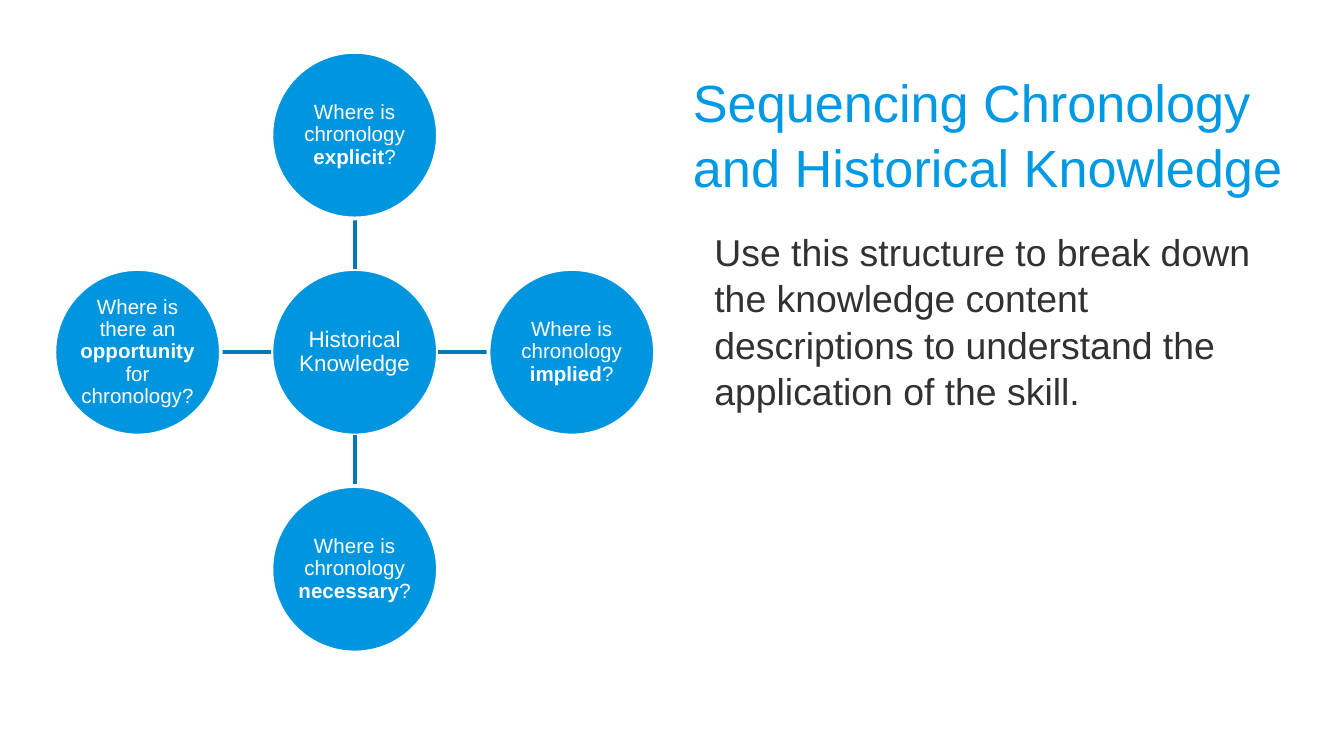
from dataclasses import dataclass

from lxml.etree import SubElement
from pptx import Presentation
from pptx.dml.color import RGBColor
from pptx.enum.shapes import MSO_CONNECTOR, MSO_SHAPE
from pptx.enum.text import MSO_ANCHOR, PP_ALIGN
from pptx.oxml.ns import qn
from pptx.slide import Slide
from pptx.text.text import TextFrame
from pptx.util import Pt


@dataclass(frozen=True)
class Theme:
    font: str = "Arial"
    title_color: RGBColor = RGBColor(0x00, 0x99, 0xE3)
    body_color: RGBColor = RGBColor(0x30, 0x31, 0x32)
    circle_color: RGBColor = RGBColor(0x00, 0x96, 0xDF)
    spoke_color: RGBColor = RGBColor(0x00, 0x78, 0xB3)
    white: RGBColor = RGBColor(0xFF, 0xFF, 0xFF)
    title_size: float = 28
    body_size: float = 20
    hub_size: float = 12
    question_size: float = 11
    line_width: float = 2


@dataclass(frozen=True)
class Span:
    text: str
    bold: bool = False


@dataclass(frozen=True)
class Question:
    across: int
    down: int
    spans: tuple[Span, ...]


@dataclass(frozen=True)
class TextBlock:
    left: float
    top: float
    width: float
    height: float
    text: str
    size: float
    color: RGBColor
    line_spacing: float
    anchor: MSO_ANCHOR
    margin_bottom: float


THEME = Theme()
HUB_X, HUB_Y = 190, 188.7
DIAMETER = 89.2
RADIUS = DIAMETER / 2
SPACING = 116.3

HUB = (Span("Historical Knowledge"),)
QUESTIONS = (
    Question(0, -1, (Span("Where is chronology "), Span("explicit", True), Span("?"))),
    Question(1, 0, (Span("Where is chronology "), Span("implied", True), Span("?"))),
    Question(0, 1, (Span("Where is chronology "), Span("necessary", True), Span("?"))),
    Question(-1, 0, (Span("Where is there an "), Span("opportunity", True), Span(" for chronology?"))),
)
TEXT_BLOCKS = (
    TextBlock(
        365.8, 36, 334.8, 67.7, "Sequencing Chronology and Historical Knowledge",
        THEME.title_size, THEME.title_color, 1.05, MSO_ANCHOR.MIDDLE, 2.7,
    ),
    TextBlock(
        377.3, 116.6, 323.3, 234,
        "Use this structure to break down the knowledge content descriptions "
        "to understand the application of the skill.",
        THEME.body_size, THEME.body_color, 1.04, MSO_ANCHOR.TOP, 2.7,
    ),
)


def set_attributes(target: object, values: dict[str, object]) -> None:
    for name, value in values.items():
        setattr(target, name, value)


def write_spans(
    frame: TextFrame, spans: tuple[Span, ...], size: float, color: RGBColor, paragraph_format: dict[str, object]
) -> None:
    para = frame.paragraphs[0]
    set_attributes(para, paragraph_format)
    for span in spans:
        run = para.add_run()
        run.text = span.text
        set_attributes(run.font, {"name": THEME.font, "size": Pt(size), "bold": span.bold})
        run.font.color.rgb = color


def draw_circle(page: Slide, center_x: float, center_y: float, spans: tuple[Span, ...], size: float) -> None:
    circle = page.shapes.add_shape(
        MSO_SHAPE.OVAL, Pt(center_x - RADIUS), Pt(center_y - RADIUS), Pt(DIAMETER), Pt(DIAMETER)
    )
    circle.shadow.inherit = False
    circle.fill.solid()
    circle.fill.fore_color.rgb = THEME.circle_color
    circle.line.color.rgb = THEME.white
    circle.line.width = Pt(THEME.line_width)
    margins = {f"margin_{side}": Pt(0.7) for side in ("left", "top", "right", "bottom")}
    set_attributes(circle.text_frame, margins | {"word_wrap": True, "vertical_anchor": MSO_ANCHOR.MIDDLE})
    write_spans(
        circle.text_frame, spans, size, THEME.white, {"alignment": PP_ALIGN.CENTER, "line_spacing": 0.9}
    )


def draw_spoke(page: Slide, across: int, down: int) -> None:
    outer = SPACING - RADIUS
    spoke = page.shapes.add_connector(
        MSO_CONNECTOR.STRAIGHT,
        Pt(HUB_X + across * RADIUS),
        Pt(HUB_Y + down * RADIUS),
        Pt(HUB_X + across * outer),
        Pt(HUB_Y + down * outer),
    )
    spoke.line.color.rgb = THEME.spoke_color
    spoke.line.width = Pt(THEME.line_width)
    SubElement(spoke.element.spPr, qn("a:effectLst"))


def draw_text(page: Slide, block: TextBlock) -> None:
    box = page.shapes.add_textbox(Pt(block.left), Pt(block.top), Pt(block.width), Pt(block.height))
    set_attributes(box.text_frame, {
        "word_wrap": True,
        "vertical_anchor": block.anchor,
        "margin_left": Pt(5.4),
        "margin_right": Pt(7.2),
        "margin_top": Pt(5),
        "margin_bottom": Pt(block.margin_bottom),
    })
    write_spans(
        box.text_frame, (Span(block.text),), block.size, block.color,
        {"alignment": PP_ALIGN.LEFT, "line_spacing": block.line_spacing},
    )


def main() -> None:
    deck = Presentation()
    set_attributes(deck, {"slide_width": Pt(720), "slide_height": Pt(405)})
    page = deck.slides.add_slide(deck.slide_layouts[6])
    draw_circle(page, HUB_X, HUB_Y, HUB, THEME.hub_size)
    for question in QUESTIONS:
        draw_spoke(page, question.across, question.down)
        draw_circle(
            page,
            HUB_X + question.across * SPACING,
            HUB_Y + question.down * SPACING,
            question.spans,
            THEME.question_size,
        )
    for block in TEXT_BLOCKS:
        draw_text(page, block)
    deck.save("out.pptx")


if __name__ == "__main__":
    main()
